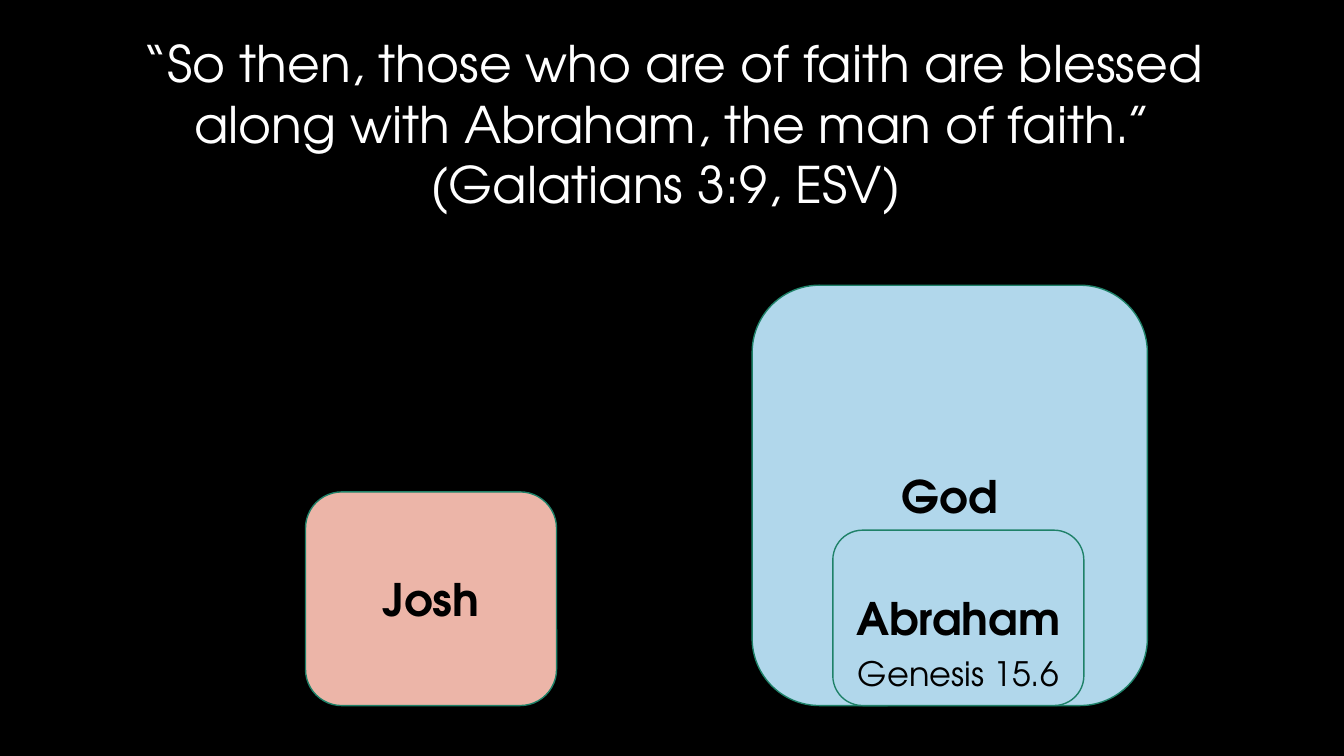
from pptx import Presentation
from pptx.dml.color import RGBColor
from pptx.enum.shapes import MSO_SHAPE
from pptx.enum.text import MSO_ANCHOR, MSO_AUTO_SIZE, PP_ALIGN
from pptx.util import Inches, Pt

ROUNDED = MSO_SHAPE.ROUND_2_SAME_RECTANGLE
TOP, MIDDLE = MSO_ANCHOR.TOP, MSO_ANCHOR.MIDDLE
CENTER = PP_ALIGN.CENTER
NO_AUTOFIT = MSO_AUTO_SIZE.NONE

FONT = "TeX Gyre Adventor"
BLACK, WHITE = "000000", "FFFFFF"
BLUE, PINK, GREEN = "B1D7EB", "ECB5A8", "1E8168"

GROUND = 7.0  # bottom edge shared by all the blocks
PERSON_WIDTH = 2.49
VERSE = ("“So then, those who are of faith are blessed along with Abraham, "
         "the man of faith.” (Galatians 3:9, ESV) ")


def rgb(color):
    return RGBColor.from_string(color)


def write(frame, text, size, color=BLACK, bold=False, anchor=TOP):
    frame.text = text
    frame.word_wrap = True
    frame.auto_size = NO_AUTOFIT
    frame.vertical_anchor = anchor
    paragraph = frame.paragraphs[0]
    paragraph.alignment = CENTER
    font = paragraph.runs[0].font
    font.name, font.size, font.bold = FONT, Pt(size), bold
    font.color.rgb = rgb(color)


def add_verse(slide, left, top, width, height):
    verse = slide.shapes.title
    verse.left, verse.top = Inches(left), Inches(top)
    verse.width, verse.height = Inches(width), Inches(height)
    write(verse.text_frame, VERSE, 36, WHITE)


def add_block(slide, name, left, width, height, fill):
    """Draw a named block, rounded on all corners, standing on the ground."""
    block = slide.shapes.add_shape(ROUNDED, Inches(left), Inches(GROUND - height),
                                   Inches(width), Inches(height))
    block.adjustments[0] = block.adjustments[1] = 0.17
    block.shadow.inherit = False
    block.fill.solid()
    block.fill.fore_color.rgb = rgb(fill)
    block.line.color.rgb = rgb(GREEN)
    block.line.width = Pt(1)
    write(block.text_frame, name, 32, bold=True, anchor=MIDDLE)


def add_god_with_abraham(slide, left, width, height):
    abraham_left = left + 0.8
    add_block(slide, "God", left, width, height, BLUE)
    add_block(slide, "Abraham", abraham_left, PERSON_WIDTH, 1.74, BLUE)
    reference = slide.shapes.add_textbox(Inches(abraham_left), Inches(GROUND - 0.57),
                                         Inches(PERSON_WIDTH), Inches(0.5))
    write(reference.text_frame, "Genesis 15.6", 24)


def main():
    deck = Presentation()
    deck.slide_width, deck.slide_height = Inches(13.33), Inches(7.5)
    slide = deck.slides.add_slide(deck.slide_layouts.get_by_name("Title Only"))
    slide.background.fill.solid()
    slide.background.fill.fore_color.rgb = rgb(BLACK)

    add_verse(slide, 0.59, 0.27, 12.16, 1.92)
    add_god_with_abraham(slide, 7.46, 3.92, 4.17)
    add_block(slide, "Josh", 3.03, PERSON_WIDTH, 2.12, PINK)
    deck.save("out.pptx")


if __name__ == "__main__":
    main()
